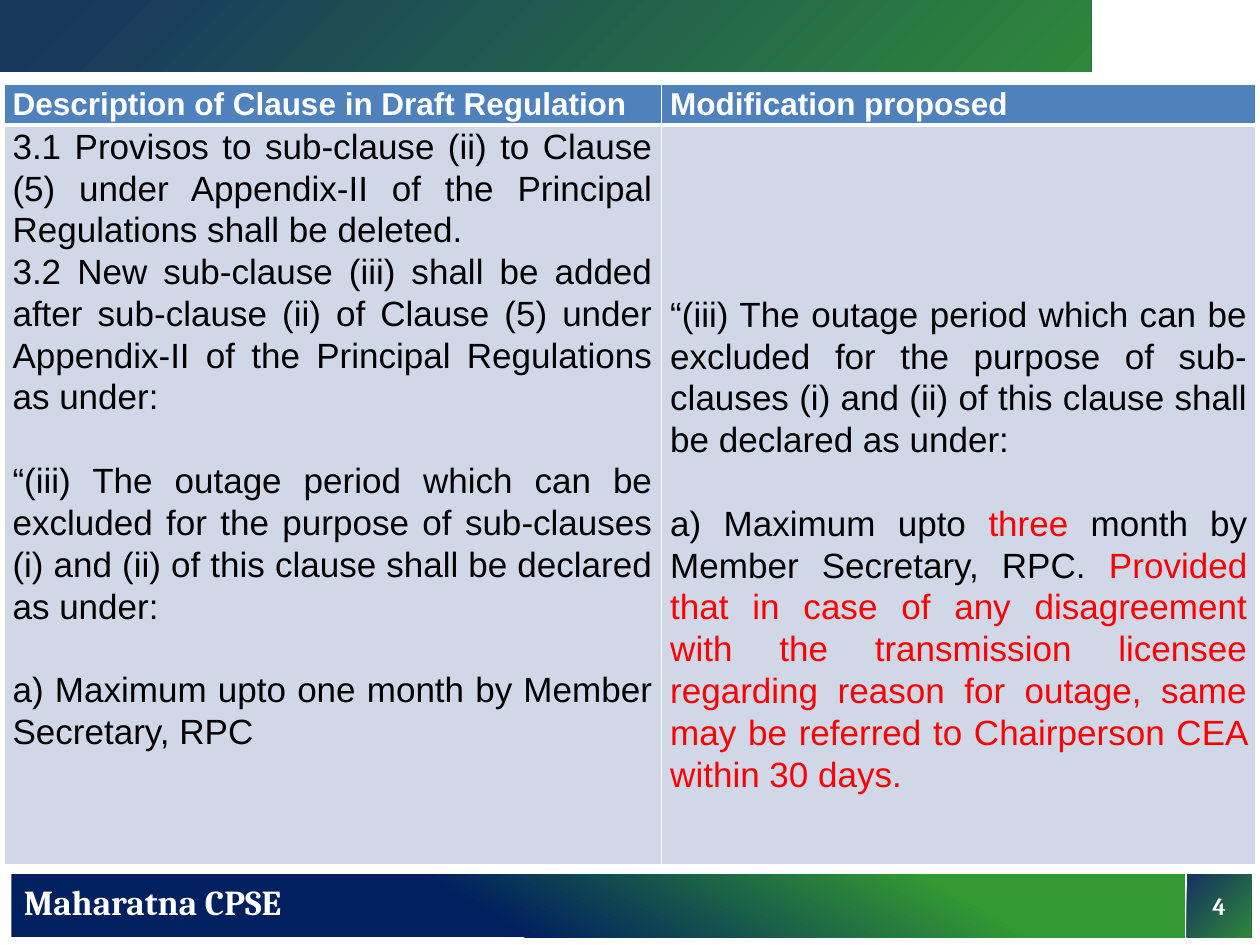
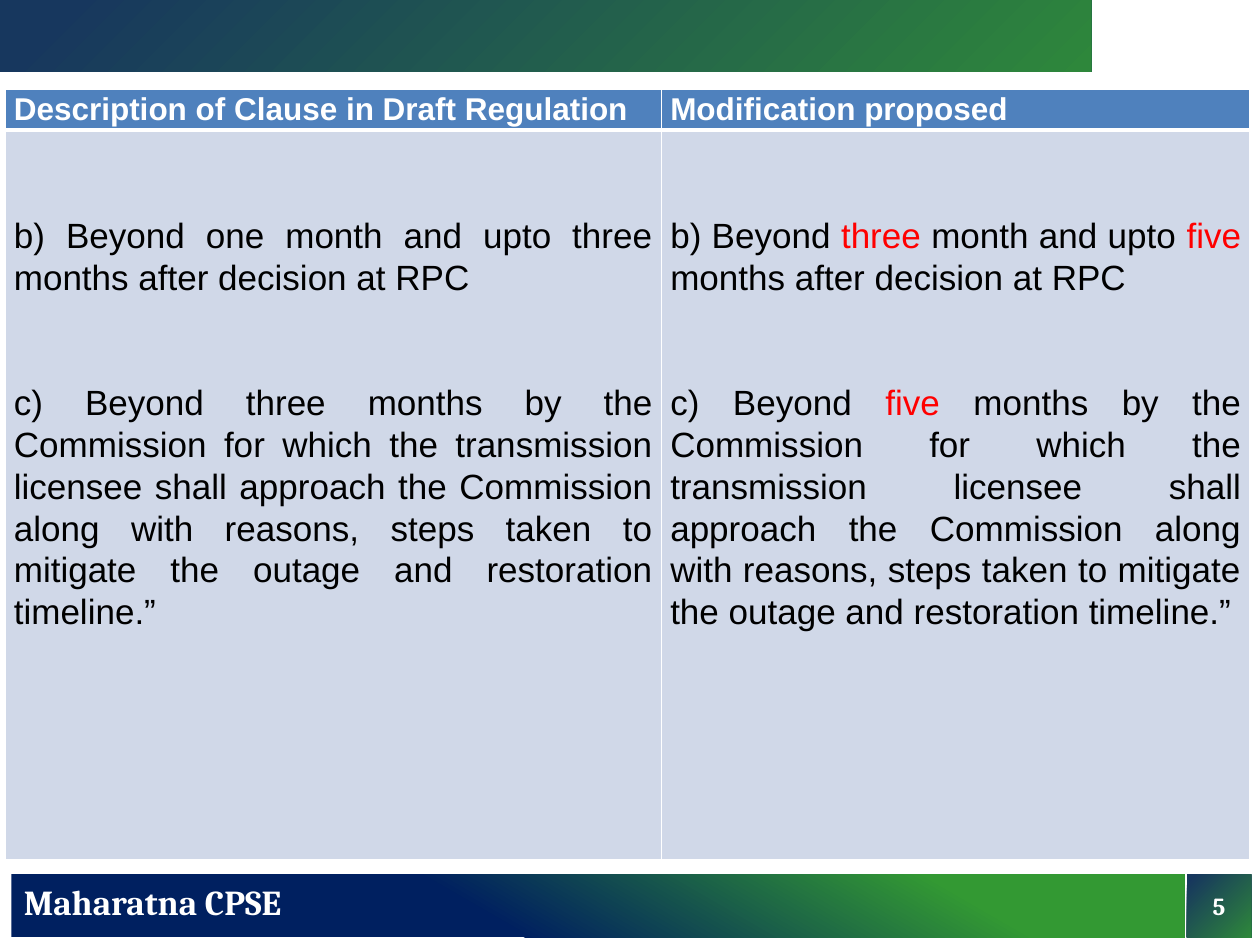
from dataclasses import dataclass

from lxml import etree
from pptx import Presentation
from pptx.dml.color import RGBColor as RGB
from pptx.enum.shapes import MSO_SHAPE as SHAPE
from pptx.enum.text import MSO_ANCHOR as ANCHOR, PP_ALIGN as ALIGN
from pptx.oxml.ns import qn
from pptx.util import Inches, Pt


@dataclass(frozen=True)
class Theme:
    white: str = "FFFFFF"
    black: str = "000000"
    change: str = "FF0000"
    header: str = "4F81BD"
    body: str = "D0D8E8"
    tile_stops: tuple = ((6, "17375E"), (100, "2E873B"))
    footer_stops: tuple = ((0, "002060"), (40, "002060"), (80, "339933"), (100, "339933"))
    table_font: str = "Arial"
    band_font: str = "Cambria"
    header_size: int = 18
    body_size: int = 20
    footer_size: int = 20
    number_size: int = 14
    line_spacing: float = 1.07
    line_pitch: int = 24
    cell_inset: float = 0.07


THEME = Theme()
HEADINGS = ("Description of Clause in Draft Regulation", "Modification proposed")
OUTAGE = ("“(iii) The outage period which can be excluded for the purpose of sub-clauses "
          "(i) and (ii) of this clause shall be declared as under:")
APPROACH = ("months by the Commission for which the transmission licensee shall approach "
            "the Commission along with reasons, steps taken to mitigate the outage and "
            "restoration timeline.”")

# Each paragraph is (lines of space above, text); *asterisks* enclose proposed changes.
CLAUSES = [
    {
        "number": 4, "at": (0.03, 0.67), "cols": (5.22, 4.72), "rows": (0.3, 5.87),
        "cells": (
            [(0, "3.1 Provisos to sub-clause (ii) to Clause (5) under Appendix-II of the "
                 "Principal Regulations shall be deleted."),
             (0, "3.2 New sub-clause (iii) shall be added after sub-clause (ii) of Clause (5) "
                 "under Appendix-II of the Principal Regulations as under:"),
             (1, OUTAGE),
             (1, "a) Maximum upto one month by Member Secretary, RPC")],
            [(4, OUTAGE),
             (1, "a) Maximum upto *three* month by Member Secretary, RPC. *Provided that in "
                 "case of any disagreement with the transmission licensee regarding reason "
                 "for outage, same may be referred to Chairperson CEA within 30 days.*")],
        ),
    },
    {
        "number": 5, "at": (0.04, 0.71), "cols": (5.21, 4.67), "rows": (0.3, 5.79),
        "cells": (
            [(2, "b) Beyond one month and upto three months after decision at RPC"),
             (2, f"c) Beyond three {APPROACH}")],
            [(2, "b) Beyond *three* month and upto *five* months after decision at RPC"),
             (2, f"c) Beyond *five* {APPROACH}")],
        ),
    },
]


def add_run(p, text, color, **font):
    r = p.add_run()
    r.text = text
    for name, value in font.items():
        setattr(r.font, name, value)
    r.font.color.rgb = RGB.from_string(color)


def add_gradient_box(slide, box, stops, angle):
    """Add a borderless rectangle; angle runs clockwise from left to right."""
    sp = slide.shapes.add_shape(SHAPE.RECTANGLE, *map(Inches, box))
    sp.shadow.inherit = False
    sp.line.fill.background()
    sp.fill.gradient()
    sp.fill.gradient_angle = 360 - angle
    stop_list = sp.fill._fill._gradFill.find(qn("a:gsLst"))
    for stop in list(stop_list):
        stop_list.remove(stop)
    for position, color in stops:
        stop = etree.SubElement(stop_list, qn("a:gs"), pos=str(position * 1000))
        etree.SubElement(stop, qn("a:srgbClr"), val=color)
    return sp


def add_bands(slide, number):
    band_font = {"name": THEME.band_font, "bold": True}
    add_gradient_box(slide, (0, 0, 8.66, 0.57), THEME.tile_stops, 45)
    add_gradient_box(slide, (0.09, 6.94, 9.31, 0.5), THEME.footer_stops, 300)

    footer = slide.shapes.add_textbox(*map(Inches, (0.09, 6.94, 9.31, 0.44)))
    footer.text_frame.word_wrap = True
    add_run(footer.text_frame.paragraphs[0], "Maharatna CPSE", THEME.white,
            size=Pt(THEME.footer_size), **band_font)

    tile = add_gradient_box(slide, (9.42, 6.94, 0.51, 0.5), THEME.tile_stops, 45)
    tf = tile.text_frame
    tf.vertical_anchor = ANCHOR.MIDDLE
    p = tf.paragraphs[0]
    p.alignment = ALIGN.CENTER
    add_run(p, str(number), THEME.white, size=Pt(THEME.number_size), **band_font)


def style_cell(cell, fill, bottom):
    tc_pr = cell._tc.get_or_add_tcPr()
    for side, width in {"L": 1, "R": 1, "T": 1, "B": bottom}.items():
        ln = etree.SubElement(tc_pr, qn(f"a:ln{side}"), w=str(Pt(width)))
        solid = etree.SubElement(ln, qn("a:solidFill"))
        etree.SubElement(solid, qn("a:srgbClr"), val=THEME.white)
    cell.fill.solid()
    cell.fill.fore_color.rgb = RGB.from_string(fill)
    inset = Inches(THEME.cell_inset)
    margins = {"margin_left": inset, "margin_right": inset, "margin_top": 0, "margin_bottom": 0}
    for name, value in margins.items():
        setattr(cell, name, value)


def fill_cell(cell, paragraphs, color, size, bold=False):
    """Write the paragraphs; space above the first becomes the cell's top margin."""
    tf = cell.text_frame
    for i, (lines, text) in enumerate(paragraphs):
        p = tf.add_paragraph() if i else tf.paragraphs[0]
        space = Pt(lines * THEME.line_pitch)
        if i:
            p.space_before = space
        else:
            cell.margin_top = space
        p.alignment = ALIGN.JUSTIFY
        p.line_spacing = THEME.line_spacing
        for j, part in enumerate(text.split("*")):
            if part:
                add_run(p, part, THEME.change if j % 2 else color,
                        name=THEME.table_font, size=Pt(size), bold=bold)


def add_clause_table(slide, at, cols, rows, cells):
    box = (*at, sum(cols), sum(rows))
    table = slide.shapes.add_table(2, 2, *map(Inches, box)).table
    table.horz_banding = False
    for row, height in zip(table.rows, rows):
        row.height = Inches(height)
    for i, (width, heading, paragraphs) in enumerate(zip(cols, HEADINGS, cells)):
        table.columns[i].width = Inches(width)
        header, body = table.cell(0, i), table.cell(1, i)
        style_cell(header, THEME.header, 3)
        style_cell(body, THEME.body, 1)
        fill_cell(header, [(0, heading)], THEME.white, THEME.header_size, bold=True)
        fill_cell(body, paragraphs, THEME.black, THEME.body_size)


def main():
    prs = Presentation()
    prs.slide_width, prs.slide_height = Inches(10), Inches(7.5)
    blank = prs.slide_layouts[6]
    for clause in CLAUSES:
        slide = prs.slides.add_slide(blank)
        add_bands(slide, clause["number"])
        add_clause_table(slide, clause["at"], clause["cols"], clause["rows"], clause["cells"])
    prs.save("out.pptx")


if __name__ == "__main__":
    main()
